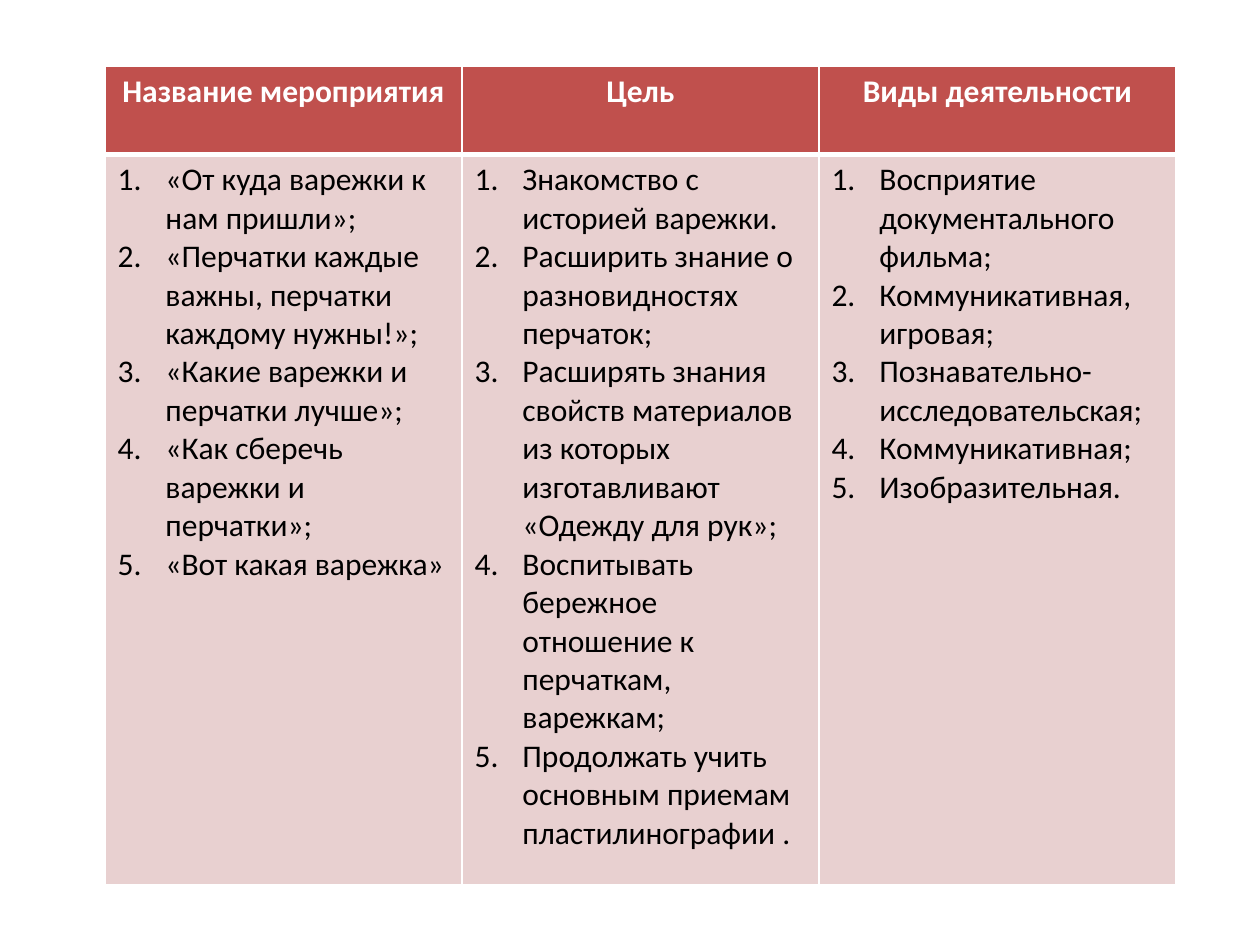
from lxml.etree import SubElement
from pptx import Presentation
from pptx.dml.color import RGBColor
from pptx.enum.text import PP_ALIGN as Align
from pptx.oxml.ns import qn
from pptx.util import Inches, Pt

WHITE = RGBColor(0xFF, 0xFF, 0xFF)
BLACK = RGBColor(0, 0, 0)
RED = RGBColor(0xC0, 0x50, 0x4D)
PINK = RGBColor(0xE8, 0xD0, 0xD0)

# Each column: heading and its numbered items
COLUMNS = [
    ("Название мероприятия", [
        "«От куда варежки к нам пришли»;",
        "«Перчатки каждые важны, перчатки каждому нужны!»;",
        "«Какие варежки и перчатки лучше»;",
        "«Как сберечь варежки и перчатки»;",
        "«Вот какая варежка»",
    ]),
    ("Цель", [
        "Знакомство с историей варежки.",
        "Расширить знание о разновидностях перчаток;",
        "Расширять знания свойств материалов из которых изготавливают «Одежду для рук»;",
        "Воспитывать бережное отношение к перчаткам, варежкам;",
        "Продолжать учить основным приемам пластилинографии .",
    ]),
    ("Виды деятельности", [
        "Восприятие документального фильма;",
        "Коммуникативная, игровая;",
        "Познавательно-исследовательская;",
        "Коммуникативная;",
        "Изобразительная.",
    ]),
]


class PageBuilder:
    """Style and current slide, laid out on a grid of 120 columns and 300 rows."""

    font_name = "Calibri"
    font_size = Pt(18)
    indent = Inches(0.38)

    def __init__(self, deck):
        self.page = deck.slides.add_slide(deck.slide_layouts[6])
        self.column = deck.slide_width / 120
        self.row = deck.slide_height / 300

    def table(self, left, top, column_width, row_heights, columns):
        frame = self.page.shapes.add_table(
            len(row_heights), len(columns),
            int(left * self.column), int(top * self.row),
            int(column_width * len(columns) * self.column),
            int(sum(row_heights) * self.row))
        grid = frame.table
        for row, height in zip(grid.rows, row_heights):
            row.height = int(height * self.row)
        for index, (heading, items) in enumerate(columns):
            self.heading_cell(grid.cell(0, index), heading)
            self.list_cell(grid.cell(1, index), items)

    def heading_cell(self, cell, text):
        self.fill_cell(cell, [text], RED, WHITE, bold=True)
        cell.text_frame.paragraphs[0].alignment = Align.CENTER
        self.borders(cell, bottom=3)

    def list_cell(self, cell, items):
        self.fill_cell(cell, items, PINK, BLACK, numbered=True)
        self.borders(cell, top=3)

    def fill_cell(self, cell, texts, fill, color, bold=False, numbered=False):
        cell.fill.solid()
        cell.fill.fore_color.rgb = fill
        cell.text_frame.text = "\n".join(texts)
        for para in cell.text_frame.paragraphs:
            if numbered:
                self.number(para)
            for span in para.runs:
                span.font.name = self.font_name
                span.font.size = self.font_size
                span.font.bold = bold
                span.font.color.rgb = color

    def number(self, para):
        props = para._p.get_or_add_pPr()
        props.set("marL", str(self.indent))
        props.set("indent", str(-self.indent))
        SubElement(props, qn("a:buFont"), typeface="+mj-lt")
        SubElement(props, qn("a:buAutoNum"), type="arabicPeriod")

    def borders(self, cell, top=1, bottom=1):
        props = cell._tc.get_or_add_tcPr()
        widths = {"a:lnL": 1, "a:lnR": 1, "a:lnT": top, "a:lnB": bottom}
        for place, (tag, width) in enumerate(widths.items()):
            line = SubElement(props, qn(tag), w=str(Pt(width)))
            paint = SubElement(line, qn("a:solidFill"))
            SubElement(paint, qn("a:srgbClr"), val=str(WHITE))
            props.insert(place, line)  # borders come before the fill


def main():
    deck = Presentation()
    deck.slide_width, deck.slide_height = Inches(10), Inches(7.5)
    builder = PageBuilder(deck)

    # Table of events, goals and activities
    builder.table(left=10, top=21, column_width=34,
                  row_heights=(28, 232), columns=COLUMNS)

    deck.save("out.pptx")


if __name__ == "__main__":
    main()
